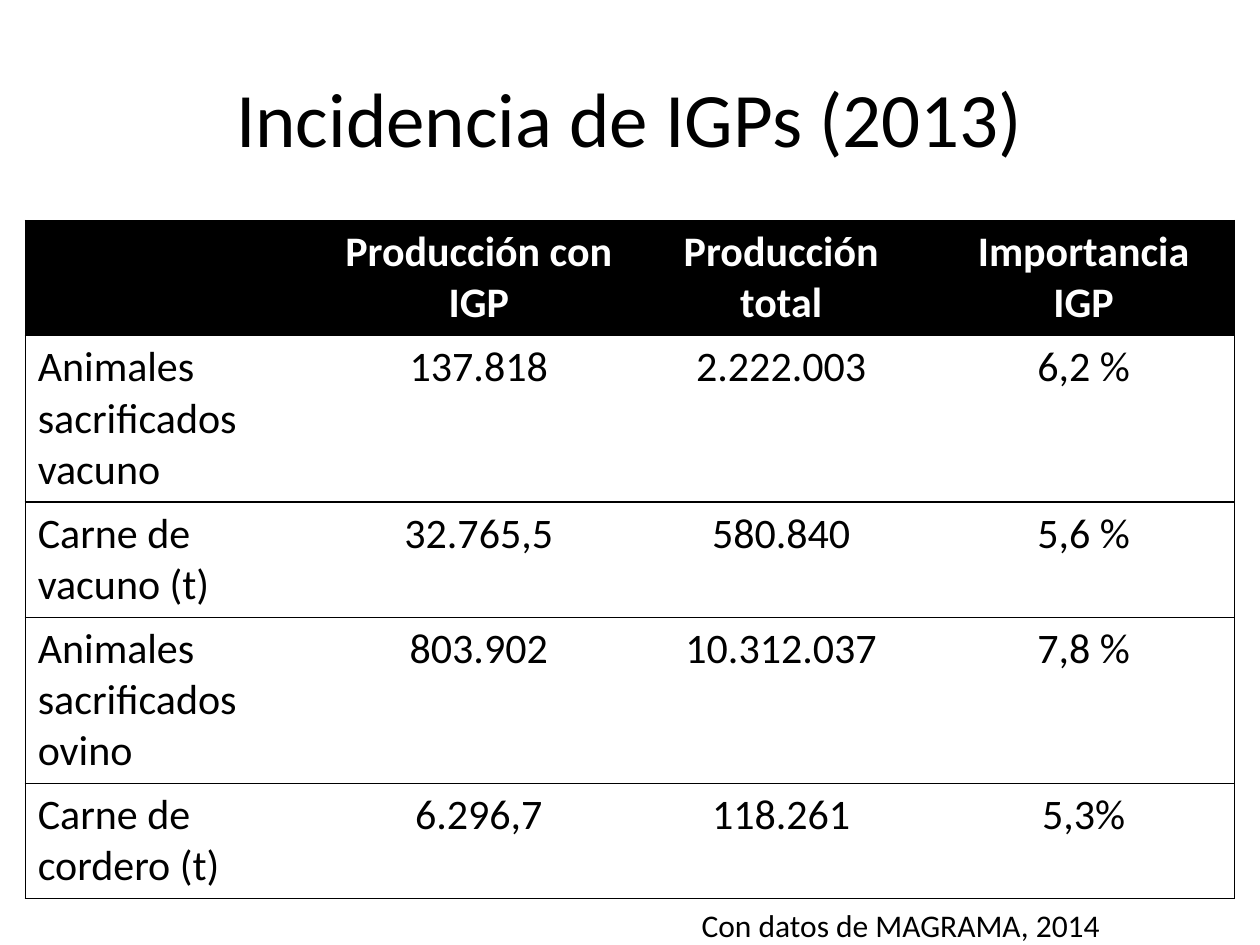
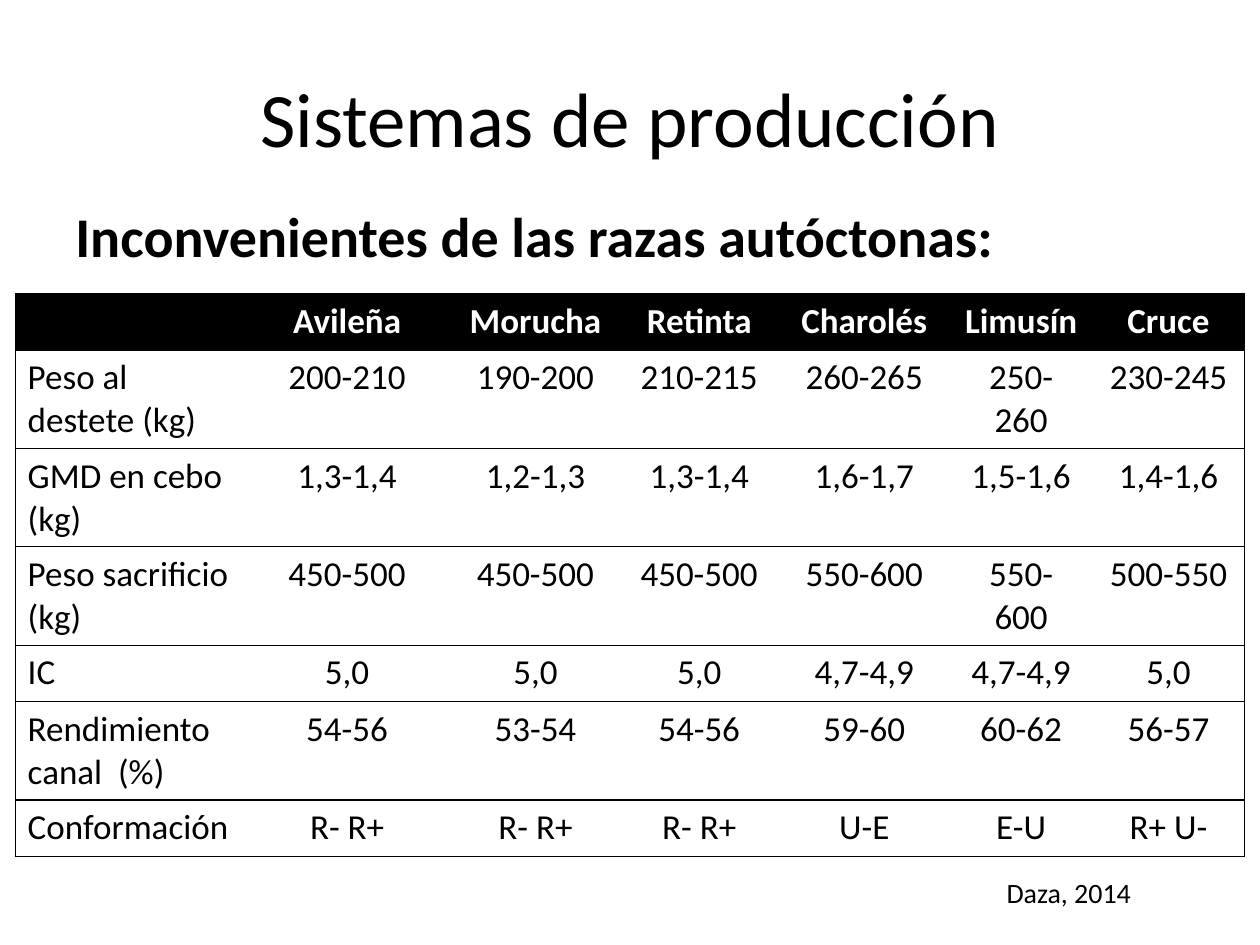
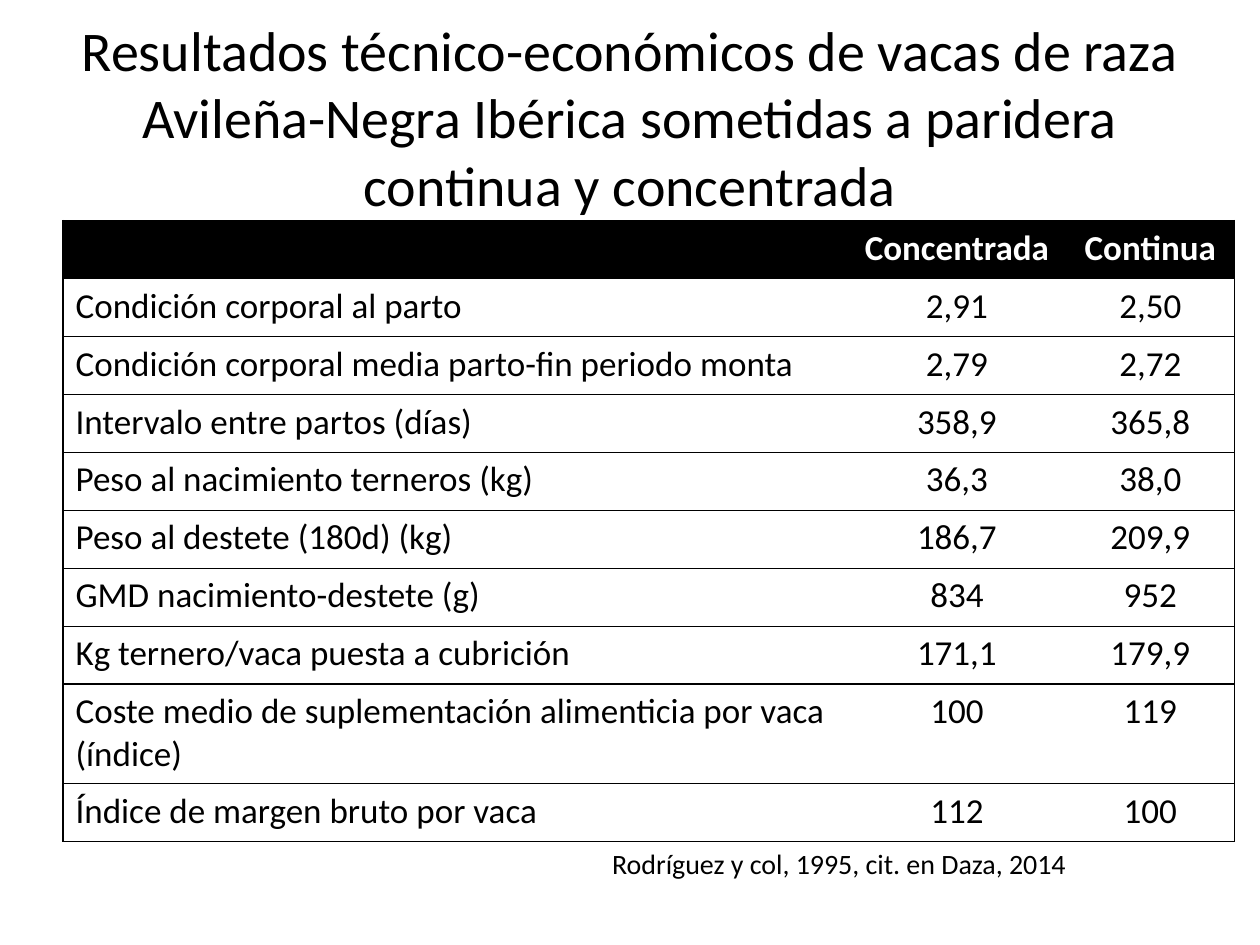
from lxml import etree
from pptx import Presentation
from pptx.dml.color import RGBColor
from pptx.enum.text import MSO_ANCHOR, MSO_AUTO_SIZE, PP_ALIGN
from pptx.oxml.ns import qn
from pptx.util import Inches, Pt

BLACK = RGBColor(0x00, 0x00, 0x00)
WHITE = RGBColor(0xFF, 0xFF, 0xFF)
FONT = "Calibri"
TITLE_ONLY = 5
PLAIN_TABLE = "{2D5ABB26-0587-4C30-8999-92F81FD0307C}"
RULE_WIDTH = Pt(0.75)


def write(frame, text, size, color=BLACK, bold=False, align=PP_ALIGN.LEFT):
    """Fill a text frame with one formatted paragraph."""
    paragraph = frame.paragraphs[0]
    paragraph.text = text
    paragraph.alignment = align
    style = {"name": FONT, "size": Pt(size), "bold": bold}
    for attribute, value in style.items():
        setattr(paragraph.font, attribute, value)
    paragraph.font.color.rgb = color


def add_titled_slide(deck, text, size=44):
    slide = deck.slides.add_slide(deck.slide_layouts[TITLE_ONLY])
    title = slide.shapes.title
    title.left, title.top = Inches(0.5), Inches(0.3)
    title.width, title.height = Inches(9), Inches(1.25)
    frame = title.text_frame
    write(frame, text, size, align=PP_ALIGN.CENTER)
    frame.word_wrap = True
    frame.auto_size = MSO_AUTO_SIZE.NONE
    frame.vertical_anchor = MSO_ANCHOR.MIDDLE
    return slide


def add_text(slide, text, box, size, bold=False):
    frame = slide.shapes.add_textbox(*map(Inches, box)).text_frame
    frame.word_wrap = True
    write(frame, text, size, bold=bold)


def draw_borders(cell, sides):
    """Rule the given sides (L, R, T, B, in that order) of a cell."""
    properties = cell._tc.get_or_add_tcPr()
    for position, side in enumerate(sides):
        line = etree.Element(qn(f"a:ln{side}"), w=str(RULE_WIDTH))
        fill = etree.SubElement(line, qn("a:solidFill"))
        etree.SubElement(fill, qn("a:srgbClr"), val=str(BLACK))
        properties.insert(position, line)


def add_data_table(slide, left, top, widths, heights, rows, size):
    """Black header row, then ruled rows with a left-aligned label column."""
    table = slide.shapes.add_table(
        len(rows), len(widths), Inches(left), Inches(top),
        Inches(sum(widths)), Inches(sum(heights))).table
    table._tbl.tblPr.find(qn("a:tableStyleId")).text = PLAIN_TABLE
    for column, width in zip(table.columns, widths):
        column.width = Inches(width)
    for row, height in zip(table.rows, heights):
        row.height = Inches(height)

    last = len(widths) - 1
    for r, values in enumerate(rows):
        header = r == 0
        for c, value in enumerate(values):
            cell = table.cell(r, c)
            if header:
                cell.fill.solid()
                cell.fill.fore_color.rgb = BLACK
            else:
                cell.fill.background()
            write(cell.text_frame, value, size,
                  color=WHITE if header else BLACK, bold=header,
                  align=PP_ALIGN.CENTER if c else PP_ALIGN.LEFT)
            outer = ("L" if c == 0 else "") + ("R" if c == last else "")
            draw_borders(cell, outer + "TB")


def add_igp_slide(deck):
    slide = add_titled_slide(deck, "Incidencia de IGPs (2013)")
    rows = [
        ("", "Producción con IGP", "Producción total", "Importancia IGP"),
        ("Animales sacrificados vacuno", "137.818", "2.222.003", "6,2 %"),
        ("Carne de vacuno (t)", "32.765,5", "580.840", "5,6 %"),
        ("Animales sacrificados ovino", "803.902", "10.312.037", "7,8 %"),
        ("Carne de cordero (t)", "6.296,7", "118.261", "5,3%"),
    ]
    add_data_table(slide, 0.2, 1.75, [2.4] * 4,
                   [0.91, 1.32, 0.91, 1.32, 0.91], rows, 24)
    add_text(slide, "Con datos de MAGRAMA, 2014", (5.47, 7.14, 3.78, 0.4), 18)


def add_breeds_slide(deck):
    slide = add_titled_slide(deck, "Sistemas de producción")
    add_text(slide, "Inconvenientes de las razas autóctonas:",
             (0.5, 1.55, 9, 0.65), 32, bold=True)
    rows = [
        ("", "Avileña", "Morucha", "Retinta", "Charolés", "Limusín", "Cruce"),
        ("Peso al destete (kg)", "200-210", "190-200", "210-215", "260-265",
         "250-260", "230-245"),
        ("GMD en cebo (kg)", "1,3-1,4", "1,2-1,3", "1,3-1,4", "1,6-1,7",
         "1,5-1,6", "1,4-1,6"),
        ("Peso sacrificio (kg)", "450-500", "450-500", "450-500", "550-600",
         "550-600", "500-550"),
        ("IC", "5,0", "5,0", "5,0", "4,7-4,9", "4,7-4,9", "5,0"),
        ("Rendimiento canal  (%)", "54-56", "53-54", "54-56", "59-60",
         "60-62", "56-57"),
        ("Conformación", "R- R+", "R- R+", "R- R+", "U-E", "E-U", "R+ U-"),
    ]
    add_data_table(slide, 0.12, 2.33,
                   [1.81, 1.65, 1.34, 1.26, 1.36, 1.13, 1.21],
                   [0.45, 0.78, 0.78, 0.78, 0.45, 0.78, 0.45], rows, 20)
    add_text(slide, "Daza, 2014", (7.89, 6.9, 2.28, 0.37), 16)


def add_calving_slide(deck):
    slide = add_titled_slide(
        deck, "Resultados técnico-económicos de vacas de raza Avileña-Negra "
        "Ibérica sometidas a paridera continua y concentrada", 32)
    rows = [
        ("", "Concentrada", "Continua"),
        ("Condición corporal al parto", "2,91", "2,50"),
        ("Condición corporal media parto-fin periodo monta", "2,79", "2,72"),
        ("Intervalo entre partos (días)", "358,9", "365,8"),
        ("Peso al nacimiento terneros (kg)", "36,3", "38,0"),
        ("Peso al destete (180d) (kg)", "186,7", "209,9"),
        ("GMD nacimiento-destete (g)", "834", "952"),
        ("Kg ternero/vaca puesta a cubrición", "171,1", "179,9"),
        ("Coste medio de suplementación alimenticia por vaca (índice)",
         "100", "119"),
        ("Índice de margen bruto por vaca", "112", "100"),
    ]
    add_data_table(slide, 0.5, 1.75, [6.23, 1.73, 1.34],
                   [0.46] * 8 + [0.79, 0.46], rows, 20)
    add_text(slide, "Rodríguez y col, 1995, cit. en Daza, 2014",
             (4.76, 6.67, 4.57, 0.37), 16)


def main():
    deck = Presentation()
    deck.slide_width, deck.slide_height = Inches(10), Inches(7.5)
    add_igp_slide(deck)
    add_breeds_slide(deck)
    add_calving_slide(deck)
    deck.save("out.pptx")


if __name__ == "__main__":
    main()
